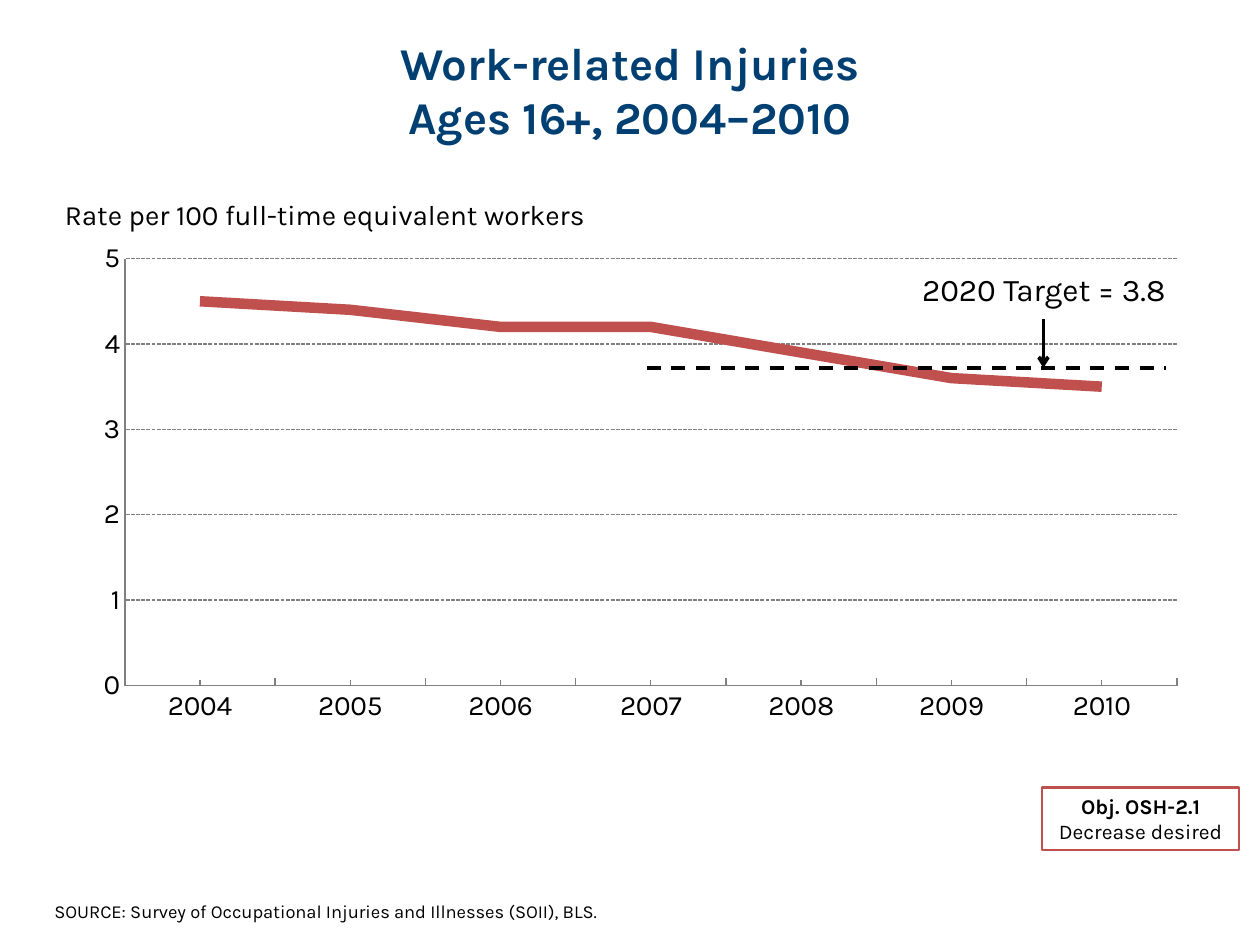
from lxml.etree import SubElement
from pptx import Presentation
from pptx.chart.data import CategoryChartData
from pptx.dml.color import RGBColor
from pptx.enum.chart import XL_CHART_TYPE, XL_MARKER_STYLE, XL_TICK_MARK
from pptx.enum.dml import MSO_LINE
from pptx.enum.shapes import MSO_CONNECTOR, MSO_SHAPE
from pptx.enum.text import MSO_ANCHOR, MSO_AUTO_SIZE, PP_ALIGN
from pptx.oxml import parse_xml
from pptx.oxml.ns import nsdecls, qn
from pptx.util import Pt

FONT = "Karla"
NAVY = RGBColor(0x00, 0x3F, 0x72)
RED = RGBColor(0xC0, 0x50, 0x4D)
BLACK = RGBColor(0, 0, 0)
GRAY = RGBColor(0x80, 0x80, 0x80)

TITLE = "Work-related Injuries\vAges 16+, 2004–2010"
RATES = {"2004": 4.5, "2005": 4.4, "2006": 4.2, "2007": 4.2,
         "2008": 3.9, "2009": 3.6, "2010": 3.5}
LABELS = [
    ("Rate per 100 full-time equivalent workers", (30, 109.5, 318, 26.5), 16, PP_ALIGN.LEFT),
    ("2020 Target = 3.8", (504, 151, 185, 29), 18, PP_ALIGN.CENTER),
    ("SOURCE: Survey of Occupational Injuries and Illnesses (SOII), BLS.",
     (24, 511, 330, 24), 10.5, PP_ALIGN.LEFT),
]
OBJECTIVE = [("Obj. OSH-2.1", True), ("Decrease desired", False)]
TARGET_Y = 210.25
TARGET_X = (369.5, 666.5)
ARROW_X, ARROW_TOP = 596.25, 182.5
PLOT = {"x": 0.078, "y": 0.075, "w": 0.879, "h": 0.724}


def points(*lengths):
    return [Pt(length) for length in lengths]


def style(font, size, color=BLACK, bold=False):
    font.name, font.size, font.bold = FONT, Pt(size), bold
    font.color.rgb = color


def add_label(slide, text, box, size, alignment):
    text_frame = slide.shapes.add_textbox(*points(*box)).text_frame
    text_frame.word_wrap = True
    text_frame.text = text
    paragraph = text_frame.paragraphs[0]
    paragraph.alignment = alignment
    style(paragraph.runs[0].font, size)


def add_line(slide, *ends):
    connector = slide.shapes.add_connector(MSO_CONNECTOR.STRAIGHT, *points(*ends))
    connector.line.color.rgb = BLACK
    connector.line.width = Pt(2)
    SubElement(connector._element.spPr, qn("a:effectLst"))
    return connector


def add_rate_chart(slide):
    data = CategoryChartData(number_format="0.0")
    data.categories = list(RATES)
    data.add_series("Series 1", list(RATES.values()))
    chart = slide.shapes.add_chart(
        XL_CHART_TYPE.LINE, *points(18, 122.5, 684, 337), data).chart
    chart.has_legend = chart.has_title = False
    style(chart.font, 16)
    plot = chart.plots[0]
    plot.vary_by_categories = False
    series = plot.series[0]
    series.smooth = False
    series.marker.style = XL_MARKER_STYLE.NONE
    series.format.line.color.rgb = RED
    series.format.line.width = Pt(6)

    years, rates = chart.category_axis, chart.value_axis
    years.major_tick_mark = years.minor_tick_mark = XL_TICK_MARK.INSIDE
    rates.major_tick_mark = rates.minor_tick_mark = XL_TICK_MARK.NONE
    rates.minimum_scale, rates.maximum_scale, rates.major_unit = 0, 5, 1
    rates.tick_labels.number_format = "0"
    rates.tick_labels.number_format_is_linked = False
    for axis in (years, rates):
        style(axis.tick_labels.font, 16)
        axis.format.line.color.rgb = GRAY
        axis.format.line.width = Pt(0.75)
    grid = rates.major_gridlines.format.line
    grid.color.rgb = GRAY
    grid.width = Pt(0.75)
    grid.dash_style = MSO_LINE.SQUARE_DOT

    modes = '<c:layoutTarget val="inner"/><c:xMode val="edge"/><c:yMode val="edge"/>'
    sizes = "".join(f'<c:{key} val="{value}"/>' for key, value in PLOT.items())
    layout = parse_xml(f'<c:layout {nsdecls("c")}><c:manualLayout>{modes}{sizes}'
                       '</c:manualLayout></c:layout>')
    plot_area = chart._chartSpace.chart.plotArea
    for old_layout in plot_area.findall(qn("c:layout")):
        plot_area.remove(old_layout)
    plot_area.insert(0, layout)


def add_objective(slide):
    box = slide.shapes.add_shape(MSO_SHAPE.RECTANGLE, *points(595.5, 450, 112.5, 36))
    box.shadow.inherit = False
    box.fill.background()
    box.line.color.rgb = RED
    box.line.width = Pt(1.25)
    text_frame = box.text_frame
    text_frame.vertical_anchor = MSO_ANCHOR.MIDDLE
    text_frame.text = "\n".join(text for text, _ in OBJECTIVE)
    for paragraph, (_, bold) in zip(text_frame.paragraphs, OBJECTIVE):
        paragraph.alignment = PP_ALIGN.CENTER
        style(paragraph.runs[0].font, 12, bold=bold)


def main():
    presentation = Presentation()
    presentation.slide_width, presentation.slide_height = points(720, 540)
    slide = presentation.slides.add_slide(presentation.slide_layouts[5])
    title = slide.shapes.title
    title.left, title.top, title.width, title.height = points(42.5, 18, 635.5, 66)
    title.text_frame.text = TITLE
    title.text_frame.auto_size = MSO_AUTO_SIZE.NONE
    title.text_frame.vertical_anchor = MSO_ANCHOR.MIDDLE
    paragraph = title.text_frame.paragraphs[0]
    paragraph.alignment = PP_ALIGN.CENTER
    for run in paragraph.runs:
        style(run.font, 26, NAVY, True)

    add_rate_chart(slide)
    for label in LABELS:
        add_label(slide, *label)
    add_objective(slide)
    target = add_line(slide, TARGET_X[0], TARGET_Y, TARGET_X[1], TARGET_Y)
    target.line.dash_style = MSO_LINE.DASH
    arrow = add_line(slide, ARROW_X, ARROW_TOP, ARROW_X, TARGET_Y)
    SubElement(arrow.line._get_or_add_ln(), qn("a:tailEnd"), type="arrow")
    presentation.save("out.pptx")


if __name__ == "__main__":
    main()
